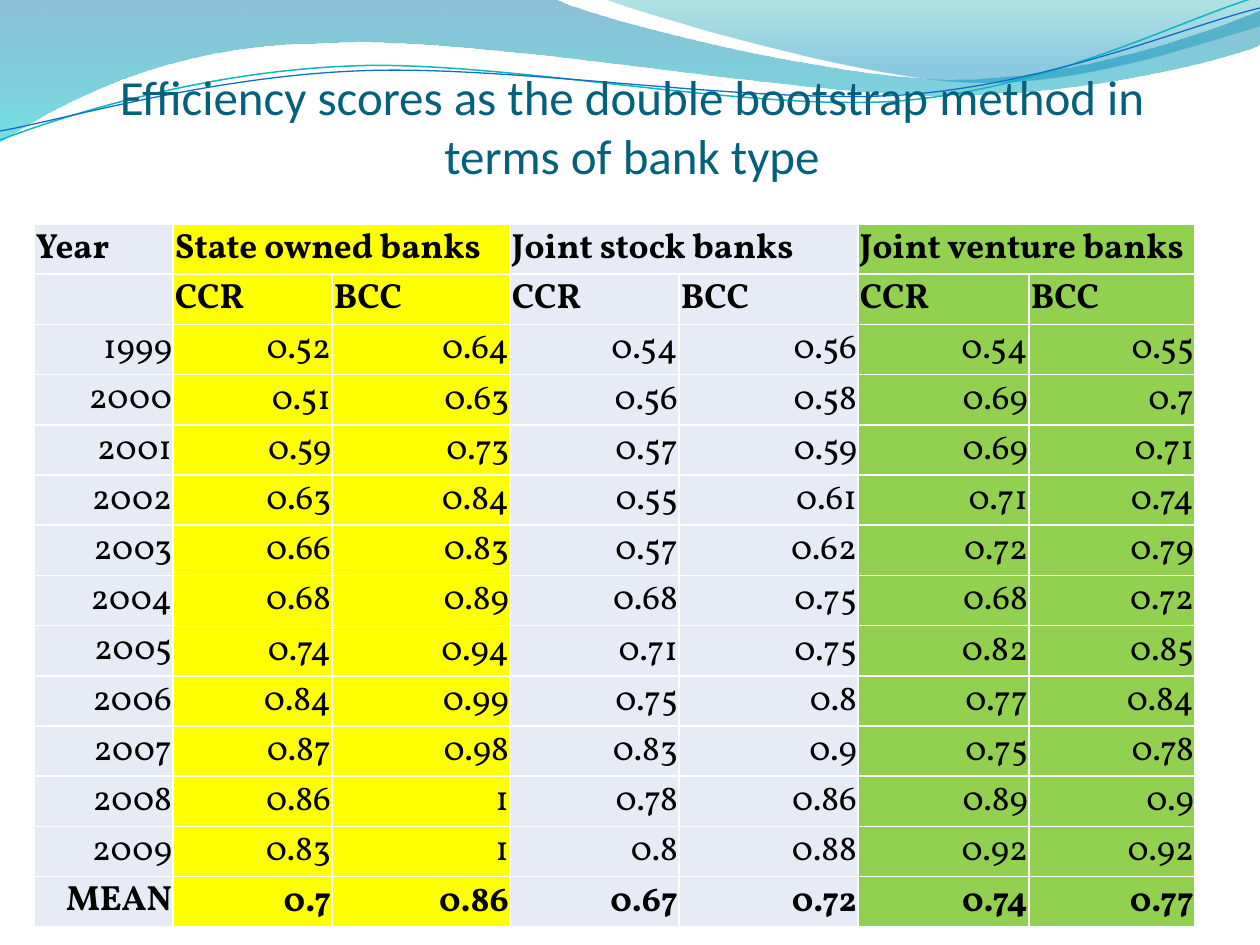
from lxml.etree import SubElement
from pptx import Presentation
from pptx.dml.color import RGBColor
from pptx.enum.text import MSO_ANCHOR, PP_ALIGN
from pptx.oxml import parse_xml
from pptx.oxml.ns import nsdecls, qn
from pptx.util import Emu, Pt

PX = 914400 / 126
PALE, YELLOW, GREEN = "E7EBF5", "FFFF00", "92D050"
COLUMN_FILLS = [PALE, YELLOW, YELLOW, PALE, PALE, GREEN, GREEN]
COLUMN_WIDTHS = [139, 159, 178, 169, 179, 171, 166]
TITLE = "Efficiency scores as the double bootstrap method in terms of bank type"
BANK_TYPES = ["State owned banks", "Joint stock banks ", "Joint venture banks "]
SCORES = """1999 0.52 0.64 0.54 0.56 0.54 0.55
2000 0.51 0.63 0.56 0.58 0.69 0.7
2001 0.59 0.73 0.57 0.59 0.69 0.71
2002 0.63 0.84 0.55 0.61 0.71 0.74
2003 0.66 0.83 0.57 0.62 0.72 0.79
2004 0.68 0.89 0.68 0.75 0.68 0.72
2005 0.74 0.94 0.71 0.75 0.82 0.85
2006 0.84 0.99 0.75 0.8 0.77 0.84
2007 0.87 0.98 0.83 0.9 0.75 0.78
2008 0.86 1 0.78 0.86 0.89 0.9
2009 0.83 1 0.8 0.88 0.92 0.92
MEAN 0.7 0.86 0.67 0.72 0.74 0.77"""
WIDE_WAVE = [
    [(0, -1)], [(554, -1)],
    [(600, 21), (837, 79), (955, 79)], [(1075, 79), (1207, 33), (1260, 11)],
    [(1261, 45)],
    [(1239, 55), (1096, 96), (940, 95)], [(784, 95), (481, 35), (324, 43)],
    [(163, 44), (58, 105), (-1, 142)],
]
RIGHT_WAVE = [
    [(604, -1)],
    [(641, 14), (859, 78), (969, 82)], [(1079, 87), (1211, 40), (1260, 26)],
    [(1260, 0)],
]
TEAL_LINE = [
    [(0, 140)],
    [(60, 117), (199, 72), (349, 66)], [(498, 59), (747, 112), (898, 101)],
    [(1050, 89), (1182, 19), (1257, -3)],
]
BLUE_LINE = [
    [(0, 131)],
    [(59, 121), (207, 77), (357, 71)], [(508, 64), (752, 105), (903, 95)],
    [(1053, 84), (1186, 26), (1260, 8)],
]


def px(length):
    """Turn px into EMU."""
    return Emu(round(length * PX))


def colour(value):
    """Turn a hex string into a colour."""
    return RGBColor.from_string(value)


def add_outline(page, left, top, segments, closed):
    """Draw a freeform of straight and cubic segments relative to left and top."""
    places = [[(px(left + x), px(top + y)) for x, y in segment] for segment in segments]
    builder = page.shapes.build_freeform(*places[0][0])
    builder.add_line_segments([place[-1] for place in places[1:]], close=closed)
    shape = builder.convert_to_shape()
    shape.shadow.inherit = False
    steps = list(shape._element.iter(qn("a:lnTo")))
    for step, place in zip(steps, places[1:]):
        if len(place) == 3:
            points = "".join(
                f'<a:pt x="{x - shape.left}" y="{y - shape.top}"/>' for x, y in place)
            curve = parse_xml(f'<a:cubicBezTo {nsdecls("a")}>{points}</a:cubicBezTo>')
            step.getparent().replace(step, curve)
    return shape


def add_wave(page, left, top, segments, stops):
    """Draw a wave with a see-through vertical gradient."""
    wave = add_outline(page, left, top, segments, True)
    wave.line.fill.background()
    wave.fill.gradient()
    wave.fill.gradient_angle = 270
    for stop, (position, value, _) in zip(wave.fill.gradient_stops, stops):
        stop.position = position
        stop.color.rgb = colour(value)
    for element, (_, _, opacity) in zip(wave._element.iter(qn("a:srgbClr")), stops):
        SubElement(element, qn("a:alpha"), val=str(opacity * 1000))


def add_wave_line(page, left, top, segments, value, width):
    """Draw a thin curved line."""
    line = add_outline(page, left, top, segments, False)
    line.fill.background()
    line.line.color.rgb = colour(value)
    line.line.width = Pt(width)


def add_header_art(page, left, top):
    """Draw the waves across the top of the page."""
    add_wave(page, left, top, WIDE_WAVE, [(0, "0074A1", 45), (1, "00C6CF", 55)])
    add_wave(page, left, top, RIGHT_WAVE, [(0, "00A1A9", 30), (0.8, "008BBF", 45)])
    add_wave_line(page, left, top, TEAL_LINE, "0AB8BF", 0.85)
    add_wave_line(page, left, top, BLUE_LINE, "0F6FC6", 0.75)


def set_text(para, text, font, size, value, bold, align):
    """Write a paragraph in one style."""
    para.add_run().text = text
    para.alignment = align
    para.font.name = font
    para.font.size = Pt(size)
    para.font.bold = bold
    para.font.color.rgb = colour(value)


def add_title(page, left, top, width, height):
    """Place the title at the foot of its box."""
    box = page.shapes.add_textbox(px(left), px(top), px(width), px(height))
    frame = box.text_frame
    frame.word_wrap = True
    frame.vertical_anchor = MSO_ANCHOR.BOTTOM
    frame.margin_left = frame.margin_right = frame.margin_bottom = 0
    frame.margin_top = px(6)
    set_text(frame.paragraphs[0], TITLE, "Calibri", 28, "04617B", False, PP_ALIGN.CENTER)


def style_cell(cell, fill, is_value):
    """Set the fill, margins, anchor and white borders of a cell."""
    cell.fill.solid()
    cell.fill.fore_color.rgb = colour(fill)
    cell.margin_left = px(11 if is_value else 2)
    cell.margin_right = cell.margin_top = px(1)
    cell.margin_bottom = px(7)
    cell.vertical_anchor = MSO_ANCHOR.MIDDLE if is_value else MSO_ANCHOR.BOTTOM
    properties = cell._tc.get_or_add_tcPr()
    for index, side in enumerate("LRTB"):
        properties.insert(index, parse_xml(
            f'<a:ln{side} {nsdecls("a")} w="{Pt(1)}"><a:solidFill>'
            f'<a:srgbClr val="FFFFFF"/></a:solidFill></a:ln{side}>'))


def add_score_table(page, left, top, height):
    """Build the table of scores by year and bank type."""
    heading = ["Year"] + [text for name in BANK_TYPES for text in (name, "")]
    rows = [heading, [""] + ["CCR", "BCC"] * len(BANK_TYPES)]
    rows += [line.split() for line in SCORES.splitlines()]
    table = page.shapes.add_table(
        len(rows), len(COLUMN_WIDTHS), px(left), px(top),
        px(sum(COLUMN_WIDTHS)), px(height)).table
    table.first_row = table.horz_banding = False
    for column, width in zip(table.columns, COLUMN_WIDTHS):
        column.width = px(width)
    for row_index, row in enumerate(rows):
        table.rows[row_index].height = px(height / len(rows))
        is_header = row_index < 2
        bold = is_header or row[0] == "MEAN"
        align = PP_ALIGN.LEFT if is_header else PP_ALIGN.RIGHT
        for column_index, text in enumerate(row):
            cell = table.cell(row_index, column_index)
            style_cell(cell, COLUMN_FILLS[column_index], not is_header and column_index > 0)
            if text:
                set_text(cell.text_frame.paragraphs[0], text, "Vollkorn", 20,
                         "000000", bold, align)
    for first in range(1, len(COLUMN_WIDTHS), 2):
        table.cell(0, first).merge(table.cell(0, first + 1))


def main():
    """Build and save the deck."""
    deck = Presentation()
    deck.slide_width, deck.slide_height = px(1260), px(945)
    page = deck.slides.add_slide(deck.slide_layouts[6])
    add_header_art(page, 0, 0)
    add_title(page, 65, 55, 1134, 129)
    add_score_table(page, 34, 224, 703)
    deck.save("out.pptx")


if __name__ == "__main__":
    main()
